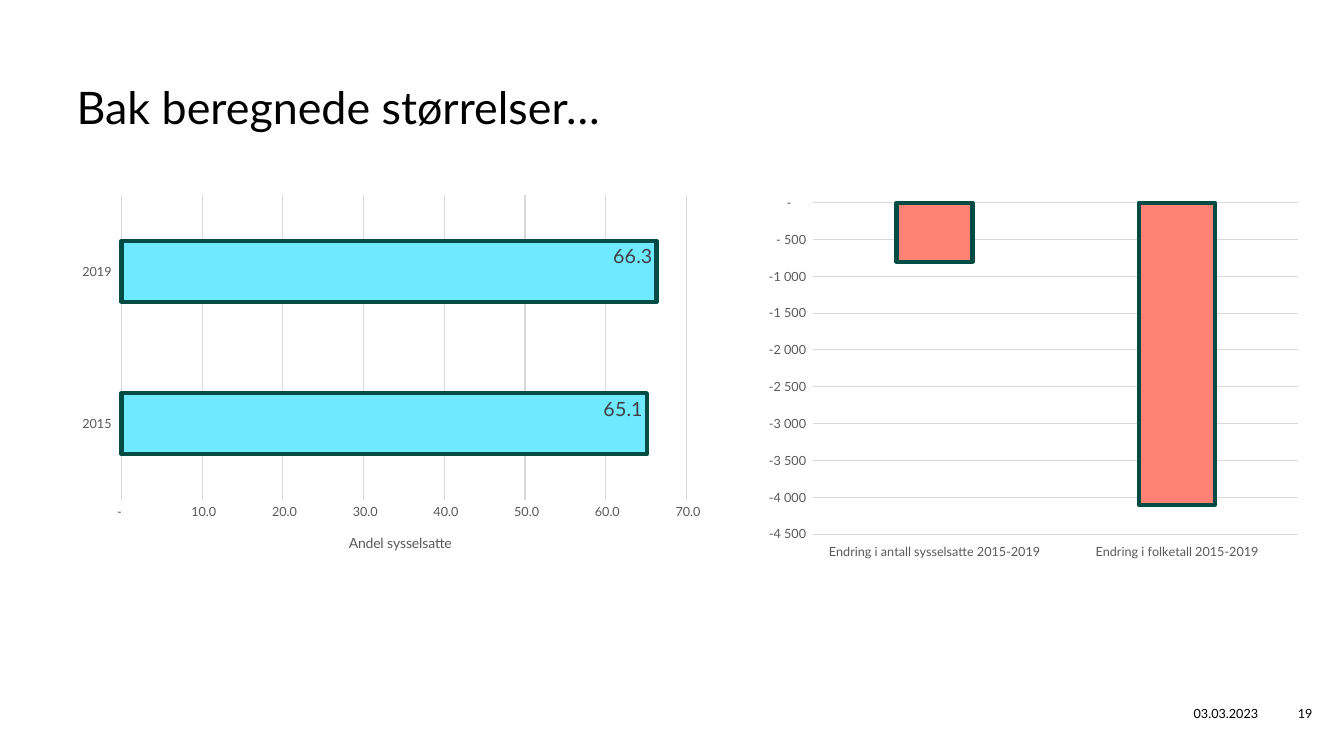
from lxml import etree
from pptx import Presentation
from pptx.chart.data import CategoryChartData
from pptx.dml.color import RGBColor
from pptx.enum.chart import XL_CHART_TYPE, XL_LABEL_POSITION, XL_TICK_LABEL_POSITION, XL_TICK_MARK
from pptx.enum.text import MSO_ANCHOR, PP_ALIGN
from pptx.oxml.ns import qn
from pptx.util import Pt

BAR, COLUMN = XL_CHART_TYPE.BAR_CLUSTERED, XL_CHART_TYPE.COLUMN_CLUSTERED
INSIDE_END = XL_LABEL_POSITION.INSIDE_END
LOW = XL_TICK_LABEL_POSITION.LOW
NO_TICK = XL_TICK_MARK.NONE
TOP, MIDDLE = MSO_ANCHOR.TOP, MSO_ANCHOR.MIDDLE
LEFT, CENTER, RIGHT = PP_ALIGN.LEFT, PP_ALIGN.CENTER, PP_ALIGN.RIGHT

FONT = "Lato"
COLORS = {name: RGBColor.from_string(value) for name, value in {
    "text": "000000", "axis": "595959", "label": "404040", "grid": "D9D9D9",
    "outline": "034B45", "share": "6FE9FF", "change": "FF8274",
}.items()}

presentation = Presentation()
presentation.slide_width, presentation.slide_height = Pt(960), Pt(540)
slide = presentation.slides.add_slide(presentation.slide_layouts[6])


def add_text(text, left, top, width, height, size=9, align=LEFT, anchor=MIDDLE, inset=None):
    frame = slide.shapes.add_textbox(Pt(left), Pt(top), Pt(width), Pt(height)).text_frame
    frame.word_wrap = True
    frame.vertical_anchor = anchor
    if inset is not None:
        frame.margin_left = frame.margin_right = Pt(inset)
        frame.margin_top = frame.margin_bottom = Pt(inset)
    paragraph = frame.paragraphs[0]
    paragraph.text = text
    paragraph.alignment = align
    paragraph.font.size = Pt(size)
    paragraph.font.name = FONT
    paragraph.font.color.rgb = COLORS["text"]


def set_layout(parent, index, **settings):
    """Give a chart part a manual layout, in fractions of the chart's size."""
    for old_layout in parent.findall(qn("c:layout")):
        parent.remove(old_layout)
    layout = etree.Element(qn("c:layout"))
    manual = etree.SubElement(layout, qn("c:manualLayout"))
    for name, value in settings.items():
        etree.SubElement(manual, qn(f"c:{name}")).set("val", str(value))
    parent.insert(index, layout)


add_text("Bak beregnede størrelser…", 54.7, 56.9, 597.6, 103, size=32, anchor=TOP, inset=0)
add_text("03.03.2023", 799.9, 495.4, 105.8, 28.8, align=RIGHT)
add_text("19", 905, 495.4, 54.7, 28.8, align=CENTER)

chart_specs = [
    dict(kind=BAR, left=54.7, width=458.6, color="share", gap=150, overlap=0,
         categories=["2015", "2019"], values=[65.1, 66.3], scale=(0, 70, 10),
         number_format=r'_ * #\ ##0.0_ ;_ * \-#\ ##0.0_ ;_ * "-"?',
         plot_area=dict(x=0.07, y=0.02, w=0.88, h=0.8)),
    dict(kind=COLUMN, left=537.1, width=398.2, color="change", gap=219, overlap=-27,
         categories=["Endring i antall sysselsatte 2015-2019", "Endring i folketall 2015-2019"],
         values=[-800, -4100], scale=(-4500, 0, 500),
         number_format=r'_ * #\ ##0_ ;_ * \-#\ ##0_ ;_ * "-"??_ ;',
         plot_area=dict(x=0.11, y=0.04, w=0.87, h=0.87)),
]

charts = []
for spec in chart_specs:
    data = CategoryChartData(number_format="0.0")
    data.categories = spec["categories"]
    data.add_series("Series 1", spec["values"])
    chart = slide.shapes.add_chart(
        spec["kind"], Pt(spec["left"]), Pt(133.9), Pt(spec["width"]), Pt(272.2), data).chart
    charts.append(chart)
    chart.has_legend = chart.has_title = False
    chart.font.name = FONT
    chart.font.size = Pt(10)
    chart.font.color.rgb = COLORS["text"]

    plot = chart.plots[0]
    plot.vary_by_categories = False
    plot.gap_width, plot.overlap = spec["gap"], spec["overlap"]
    series = plot.series[0]
    series.invert_if_negative = False
    series.format.fill.solid()
    series.format.fill.fore_color.rgb = COLORS[spec["color"]]
    series.format.line.color.rgb = COLORS["outline"]
    series.format.line.width = Pt(3)

    category_axis, value_axis = chart.category_axis, chart.value_axis
    for axis in (category_axis, value_axis):
        axis.major_tick_mark = axis.minor_tick_mark = NO_TICK
        axis.tick_labels.font.name = FONT
        axis.tick_labels.font.size = Pt(9)
        axis.tick_labels.font.color.rgb = COLORS["axis"]
    category_axis.tick_label_position = LOW
    value_axis.has_major_gridlines = True
    for line in (category_axis.format.line, value_axis.major_gridlines.format.line):
        line.color.rgb = COLORS["grid"]
        line.width = Pt(0.75)
    value_axis.format.line.fill.background()
    value_axis.minimum_scale, value_axis.maximum_scale, value_axis.major_unit = spec["scale"]
    value_axis.tick_labels.number_format = spec["number_format"]
    value_axis.tick_labels.number_format_is_linked = False

    plot_area = chart.element.find(f".//{qn('c:plotArea')}")
    set_layout(plot_area, 0, layoutTarget="inner", xMode="edge", yMode="edge", **spec["plot_area"])

share_chart = charts[0]
axis_title = share_chart.value_axis.axis_title
axis_title.text_frame.text = "Andel sysselsatte"
title_font = axis_title.text_frame.paragraphs[0].runs[0].font
title_font.name = FONT
title_font.size = Pt(10)
title_font.bold = False
title_font.color.rgb = COLORS["axis"]
set_layout(share_chart.element.find(f".//{qn('c:title')}"), 1,
           xMode="edge", yMode="edge", x=0.42, y=0.9)

share_series = share_chart.plots[0].series[0]
labels = share_series.data_labels
labels.show_value = True
labels.number_format = "0.0"
labels.number_format_is_linked = False
labels.position = INSIDE_END
point_labels = [share_series.points[index].data_label for index in range(2)]
for label in point_labels:
    label.position = INSIDE_END
for label in [labels, *point_labels]:
    label.font.name = FONT
    label.font.size = Pt(14)
    label.font.color.rgb = COLORS["label"]
for label_element in share_chart.element.iter(qn("c:dLbl")):
    set_layout(label_element, 1, x=0, y=-0.04)

presentation.save("out.pptx")
